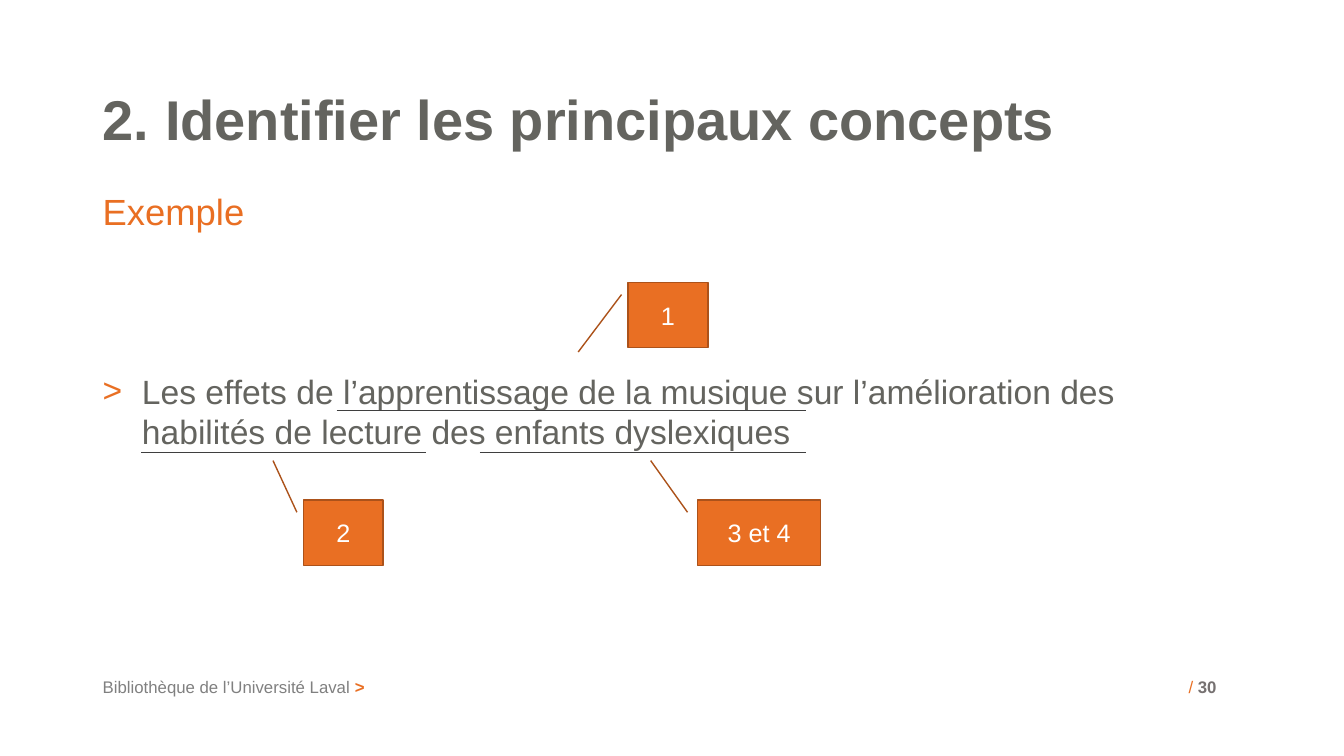
from dataclasses import dataclass

from lxml import etree
from pptx import Presentation
from pptx.dml.color import RGBColor
from pptx.enum.shapes import MSO_CONNECTOR, MSO_SHAPE
from pptx.enum.text import MSO_ANCHOR, MSO_AUTO_SIZE, PP_ALIGN
from pptx.oxml.ns import qn
from pptx.util import Inches, Pt

STRAIGHT = MSO_CONNECTOR.STRAIGHT
CALLOUT = MSO_SHAPE.LINE_CALLOUT_1
TOP, MIDDLE = MSO_ANCHOR.TOP, MSO_ANCHOR.MIDDLE
LEFT, CENTER = PP_ALIGN.LEFT, PP_ALIGN.CENTER
NO_FIT = MSO_AUTO_SIZE.NONE

COLORS = {
    "orange": "E96F23",
    "rust": "AC521A",
    "text": "64645F",
    "rule": "3F3F3F",
    "footer": "808080",
    "page": "767171",
    "white": "FFFFFF",
}
FONT = "Arial"
SLIDE_WIDTH, SLIDE_HEIGHT = Inches(13.33), Inches(7.5)
COLUMN = SLIDE_WIDTH / 133.3
ROW = SLIDE_HEIGHT / 75
MARGIN = 9.2
CONTENT_WIDTH = 115
FOOTER_ROW, FOOTER_HEIGHT = 66.6, 4
CALLOUT_HEIGHT = 6.5
BULLET_INDENT = 3.9


@dataclass(frozen=True)
class Area:
    column: float
    row: float
    columns: float
    rows: float

    def emu(self) -> tuple[int, int, int, int]:
        return (
            round(self.column * COLUMN),
            round(self.row * ROW),
            round(self.columns * COLUMN),
            round(self.rows * ROW),
        )


@dataclass(frozen=True)
class Run:
    text: str
    color: str
    bold: bool = False


@dataclass(frozen=True)
class Callout:
    label: str
    area: Area
    tip_row: float
    tip_column: float


@dataclass(frozen=True)
class Underline:
    start: float
    end: float
    row: float


CALLOUTS = (
    Callout("1", Area(62.3, 28, 7.9, CALLOUT_HEIGHT), 1.065, -0.627),
    Callout("2", Area(30.1, 49.6, 7.9, CALLOUT_HEIGHT), -0.601, -0.383),
    Callout("3 et 4", Area(69.2, 49.6, 12.2, CALLOUT_HEIGHT), -0.601, -0.383),
)
UNDERLINES = (
    Underline(33.4, 79.9, 40.7),
    Underline(14, 42.3, 44.9),
    Underline(47.6, 79.9, 44.9),
)


def color_of(name: str) -> RGBColor:
    return RGBColor.from_string(COLORS[name])


def write_text(shape, *runs: Run, size: float, align=LEFT, anchor=TOP,
               line_spacing: float = 1, bullet: str = "") -> None:
    frame = shape.text_frame
    frame.auto_size = NO_FIT
    frame.word_wrap = True
    frame.vertical_anchor = anchor
    paragraph = frame.paragraphs[0]
    paragraph.alignment = align
    paragraph.line_spacing = line_spacing
    if bullet:
        add_bullet(paragraph, bullet)
    for part in runs:
        run = paragraph.add_run()
        run.text = part.text
        run.font.name = FONT
        run.font.size = Pt(size)
        run.font.bold = part.bold
        run.font.color.rgb = color_of(part.color)


def add_bullet(paragraph, character: str) -> None:
    properties = paragraph._p.get_or_add_pPr()
    indent = round(BULLET_INDENT * COLUMN)
    properties.set("marL", str(indent))
    properties.set("indent", str(-indent))
    bullet_color = etree.SubElement(properties, qn("a:buClr"))
    etree.SubElement(bullet_color, qn("a:srgbClr"), val=COLORS["orange"])
    etree.SubElement(properties, qn("a:buFont"), typeface=FONT)
    etree.SubElement(properties, qn("a:buChar"), char=character)


def add_text(slide, area: Area, *runs: Run, **text_format) -> None:
    write_text(slide.shapes.add_textbox(*area.emu()), *runs, **text_format)


def add_title(slide, text: str) -> None:
    title = slide.shapes.title
    area = Area(MARGIN, 8.7, CONTENT_WIDTH, 6.9)
    title.left, title.top, title.width, title.height = area.emu()
    write_text(title, Run(text, "text", True), size=40, anchor=MIDDLE, line_spacing=0.9)


def add_callout(slide, callout: Callout) -> None:
    shape = slide.shapes.add_shape(CALLOUT, *callout.area.emu())
    shape.shadow.inherit = False
    shape.fill.solid()
    shape.fill.fore_color.rgb = color_of("orange")
    shape.line.color.rgb = color_of("rust")
    shape.line.width = Pt(1)
    points = (0.188, -0.083, callout.tip_row, callout.tip_column)
    for index, value in enumerate(points):
        shape.adjustments[index] = value
    write_text(shape, Run(callout.label, "white"), size=18, align=CENTER, anchor=MIDDLE)


def add_underline(slide, underline: Underline) -> None:
    row = round(underline.row * ROW)
    start, end = round(underline.start * COLUMN), round(underline.end * COLUMN)
    connector = slide.shapes.add_connector(STRAIGHT, start, row, end, row)
    connector.line.color.rgb = color_of("rule")
    connector.line.width = Pt(0.5)
    etree.SubElement(connector._element.spPr, qn("a:effectLst"))


def main() -> None:
    presentation = Presentation()
    presentation.slide_width = SLIDE_WIDTH
    presentation.slide_height = SLIDE_HEIGHT
    slide = presentation.slides.add_slide(presentation.slide_layouts.get_by_name("Title Only"))

    add_title(slide, "2. Identifier les principaux concepts")
    add_text(slide, Area(MARGIN, 18.7, CONTENT_WIDTH, 5),
             Run("Exemple", "orange"), size=26, anchor=MIDDLE, line_spacing=0.9)
    add_text(slide, Area(MARGIN, 36.3, CONTENT_WIDTH, 8.9),
             Run("Les effets de l’apprentissage de la musique sur l’amélioration des "
                 "habilités de lecture des enfants dyslexiques", "text"),
             size=24, anchor=MIDDLE, bullet=">")
    for callout in CALLOUTS:
        add_callout(slide, callout)
    for underline in UNDERLINES:
        add_underline(slide, underline)
    add_text(slide, Area(MARGIN, FOOTER_ROW, 106.2, FOOTER_HEIGHT),
             Run("Bibliothèque de l’Université Laval ", "footer"),
             Run(">", "orange", True), size=12)
    add_text(slide, Area(116.9, FOOTER_ROW, 7.2, FOOTER_HEIGHT),
             Run("/ ", "orange"), Run("30", "page", True), size=12)
    presentation.save("out.pptx")


if __name__ == "__main__":
    main()
